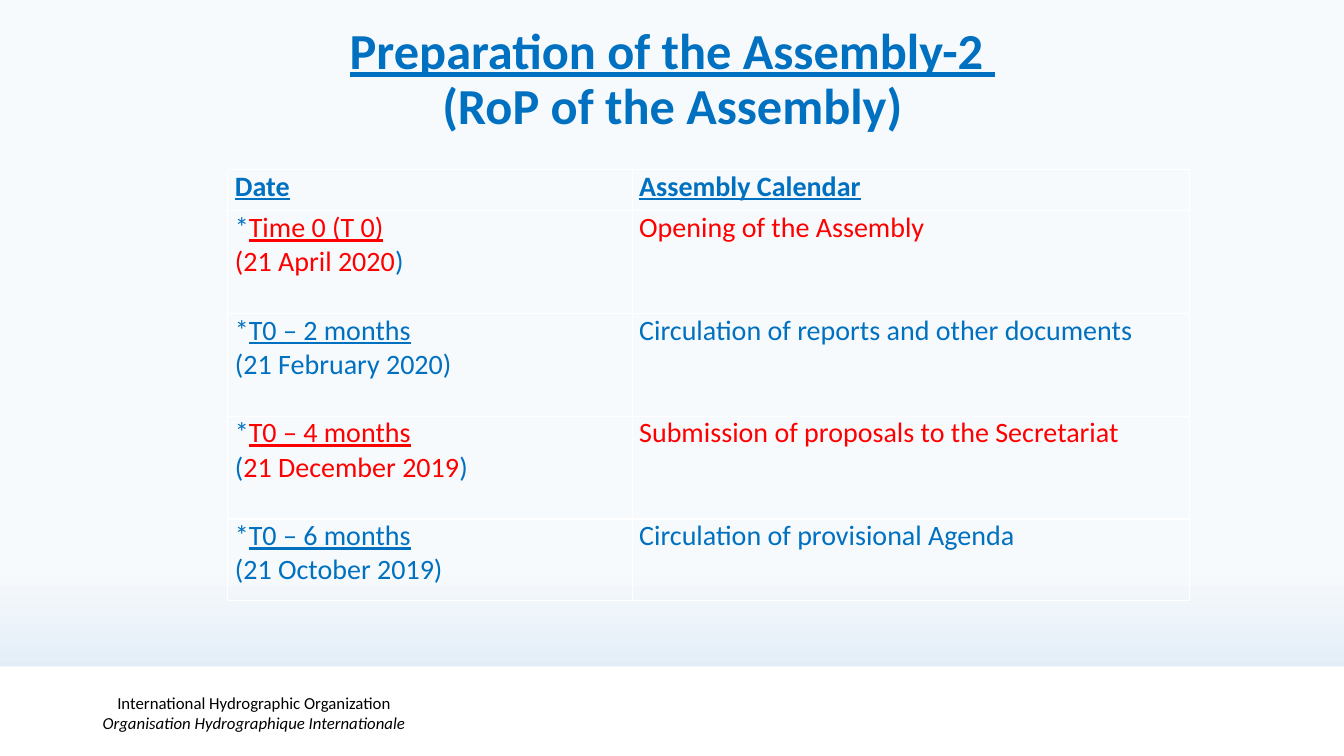
from dataclasses import dataclass

import lxml.etree
import pptx
import pptx.dml.color
import pptx.enum.shapes
import pptx.enum.text
import pptx.oxml
import pptx.oxml.ns
import pptx.slide
import pptx.table
import pptx.text.text
import pptx.util
from pptx.util import Inches


@dataclass(frozen=True)
class Theme:
    font: str = "Calibri"
    blue: str = "0070C0"
    red: str = "FF0000"
    black: str = "000000"
    white: str = "FFFFFF"
    sky_top: str = "F7FAFD"
    sky_bottom: str = "D0E2F1"
    title_size: int = 36
    table_size: int = 20
    footer_size: int = 12


THEME = Theme()


@dataclass(frozen=True)
class Span:
    text: str
    color: str | None = None
    underline: bool = False
    italic: bool = False


@dataclass(frozen=True)
class CalendarRow:
    height: float
    date_lines: tuple[tuple[Span, ...], ...]
    event: Span
    bold: bool = False


BLUE, RED = THEME.blue, THEME.red
COLUMN_WIDTHS = (4.01, 5.53)
CALENDAR = (
    CalendarRow(0.41, ((Span("Date", BLUE, True),),), Span("Assembly Calendar", BLUE, True), True),
    CalendarRow(
        1.02,
        ((Span("*", BLUE), Span("Time 0 (T 0)", RED, True)), (Span("(21 April 2020", RED), Span(")", BLUE))),
        Span("Opening of the Assembly", RED),
    ),
    CalendarRow(
        1.02,
        ((Span("*", BLUE), Span("T0 – 2 months", BLUE, True)), (Span("(21 February 2020)", BLUE),)),
        Span("Circulation of reports and other documents", BLUE),
    ),
    CalendarRow(
        1.02,
        (
            (Span("*", BLUE), Span("T0 – 4 months", RED, True)),
            (Span("(", BLUE), Span("21 December 2019", RED), Span(")", BLUE)),
        ),
        Span("Submission of proposals to the Secretariat", RED),
    ),
    CalendarRow(
        0.81,
        ((Span("*", BLUE), Span("T0 – 6 months", BLUE, True)), (Span("(21 October 2019)", BLUE),)),
        Span("Circulation of provisional Agenda", BLUE),
    ),
)


def rgb(color: str) -> pptx.dml.color.RGBColor:
    return pptx.dml.color.RGBColor.from_string(color)


def format_paragraph(
    paragraph: pptx.text.text._Paragraph, size: int, color: str | None = None, bold: bool = False
) -> None:
    paragraph.font.name = THEME.font
    paragraph.font.size = pptx.util.Pt(size)
    paragraph.font.bold = bold
    if color:
        paragraph.font.color.rgb = rgb(color)


def add_span(paragraph: pptx.text.text._Paragraph, span: Span) -> None:
    run = paragraph.add_run()
    run.text = span.text
    if span.color:
        run.font.color.rgb = rgb(span.color)
    if span.underline:
        run.font.underline = True
    if span.italic:
        run.font.italic = True


def add_broken_lines(paragraph: pptx.text.text._Paragraph, first: Span, second: Span) -> None:
    add_span(paragraph, first)
    paragraph.add_line_break()
    add_span(paragraph, second)
    paragraph.alignment = pptx.enum.text.PP_ALIGN.CENTER


def paint_background(slide: pptx.slide.Slide) -> None:
    fill = slide.background.fill
    fill.gradient()
    fill.gradient_angle = 270
    stops = ((0.75, THEME.sky_top), (1.0, THEME.sky_bottom))
    for stop, (position, color) in zip(fill.gradient_stops, stops):
        stop.position = position
        stop.color.rgb = rgb(color)


def add_footer(slide: pptx.slide.Slide) -> None:
    band = slide.shapes.add_shape(
        pptx.enum.shapes.MSO_SHAPE.RECTANGLE, Inches(0), Inches(6.61), Inches(13.33), Inches(0.89)
    )
    band.shadow.inherit = False
    band.fill.solid()
    band.fill.fore_color.rgb = rgb(THEME.white)
    band.line.fill.background()

    label = slide.shapes.add_textbox(Inches(0.27), Inches(6.87), Inches(4.5), Inches(0.4))
    frame = label.text_frame
    frame.word_wrap = True
    frame.vertical_anchor = pptx.enum.text.MSO_ANCHOR.MIDDLE
    paragraph = frame.paragraphs[0]
    add_broken_lines(
        paragraph,
        Span("International Hydrographic Organization"),
        Span("Organisation Hydrographique Internationale", italic=True),
    )
    format_paragraph(paragraph, THEME.footer_size, THEME.black)


def fill_title(slide: pptx.slide.Slide) -> None:
    title = slide.shapes.title
    title.left, title.top, title.width, title.height = Inches(1.67), Inches(0), Inches(10), Inches(1.39)
    frame = title.text_frame
    frame.word_wrap = True
    frame.auto_size = pptx.enum.text.MSO_AUTO_SIZE.NONE
    frame.vertical_anchor = pptx.enum.text.MSO_ANCHOR.BOTTOM
    paragraph = frame.paragraphs[0]
    add_broken_lines(
        paragraph, Span("Preparation of the Assembly-2 ", underline=True), Span("(RoP of the Assembly)")
    )
    paragraph.line_spacing = 0.9
    format_paragraph(paragraph, THEME.title_size, THEME.blue, True)


def style_cell(cell: pptx.table._Cell) -> None:
    cell.margin_left = cell.margin_right = Inches(0.07)
    cell.margin_top = cell.margin_bottom = Inches(0)
    properties = cell._tc.get_or_add_tcPr()
    for side in ("a:lnL", "a:lnR", "a:lnT", "a:lnB"):
        border = lxml.etree.SubElement(properties, pptx.oxml.ns.qn(side), w="12700")
        solid = lxml.etree.SubElement(border, pptx.oxml.ns.qn("a:solidFill"))
        lxml.etree.SubElement(solid, pptx.oxml.ns.qn("a:srgbClr"), val=THEME.white)
    cell.fill.background()


def fill_cell(cell: pptx.table._Cell, lines: tuple[tuple[Span, ...], ...], bold: bool) -> None:
    style_cell(cell)
    frame = cell.text_frame
    for index, spans in enumerate(lines):
        paragraph = frame.add_paragraph() if index else frame.paragraphs[0]
        for span in spans:
            add_span(paragraph, span)
        format_paragraph(paragraph, THEME.table_size, bold=bold)


def add_calendar(slide: pptx.slide.Slide) -> None:
    height = sum(row.height for row in CALENDAR)
    table = slide.shapes.add_table(
        len(CALENDAR), 2, Inches(2.26), Inches(1.68), Inches(sum(COLUMN_WIDTHS)), Inches(height)
    ).table
    table.first_row = table.horz_banding = False
    for column, width in zip(table.columns, COLUMN_WIDTHS):
        column.width = Inches(width)
    for index, row in enumerate(CALENDAR):
        table.rows[index].height = Inches(row.height)
        fill_cell(table.cell(index, 0), row.date_lines, row.bold)
        fill_cell(table.cell(index, 1), ((row.event,),), row.bold)


def main() -> None:
    presentation = pptx.Presentation()
    presentation.slide_width, presentation.slide_height = Inches(13.33), Inches(7.5)
    slide = presentation.slides.add_slide(presentation.slide_layouts[0])
    subtitle = slide.placeholders[1].element
    subtitle.getparent().remove(subtitle)
    paint_background(slide)
    add_footer(slide)
    add_calendar(slide)
    fill_title(slide)
    presentation.save("out.pptx")


if __name__ == "__main__":
    main()
